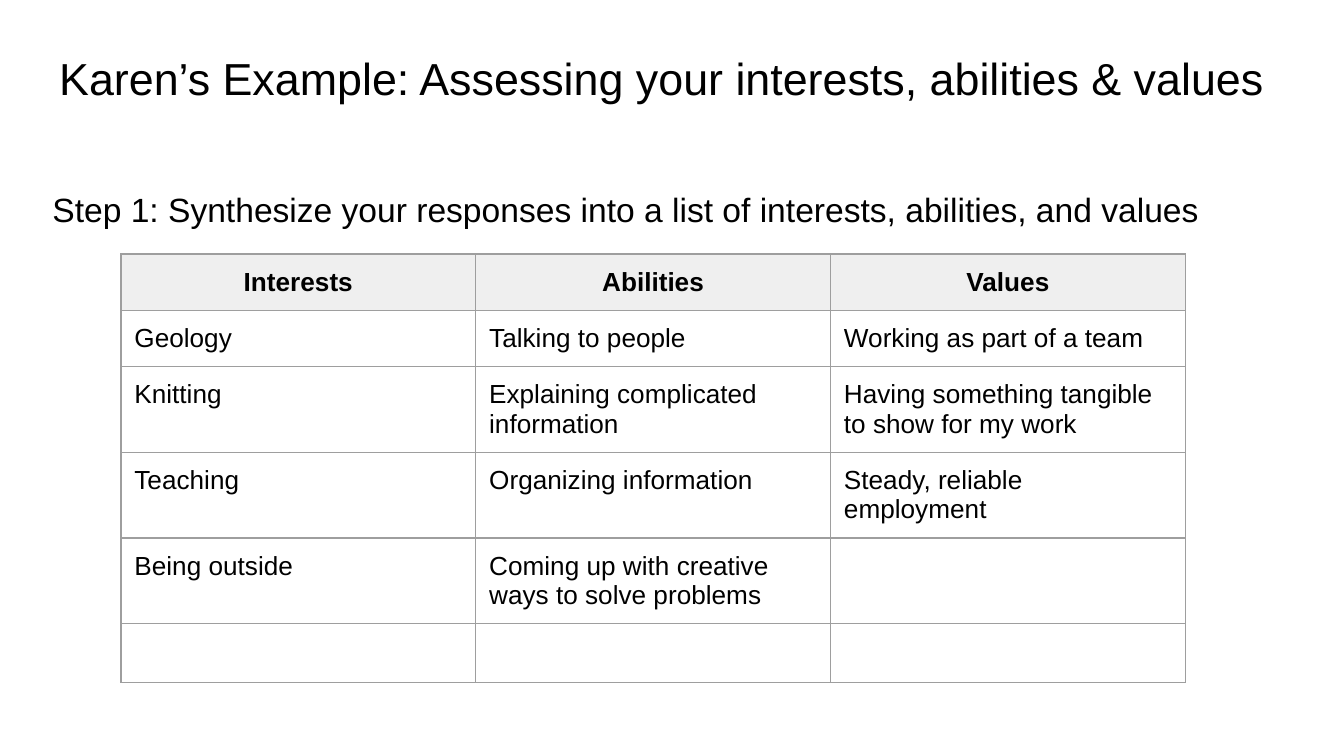
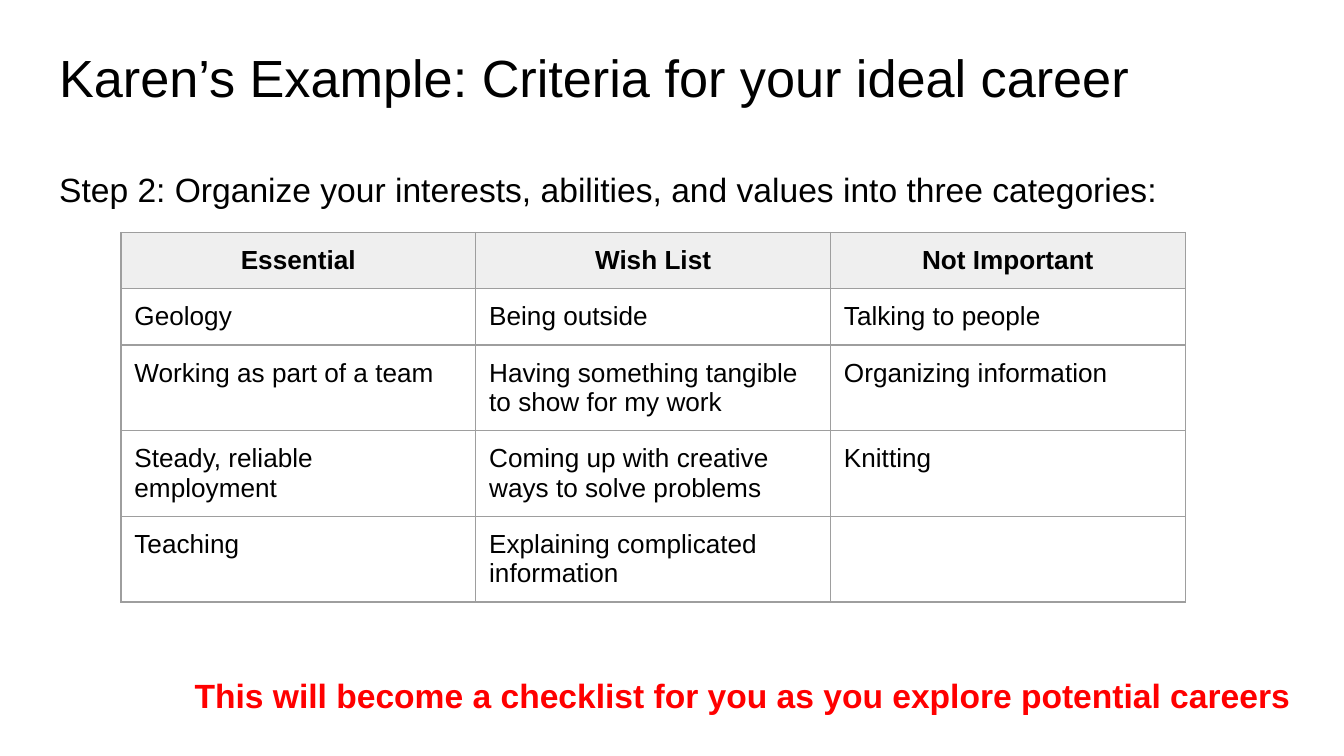
from lxml.etree import SubElement
from pptx import Presentation
from pptx.dml.color import RGBColor
from pptx.enum.text import MSO_ANCHOR, MSO_AUTO_SIZE, PP_ALIGN
from pptx.oxml.ns import qn
from pptx.util import Inches, Pt

COLORS = {
    "background": "FFFFFF",
    "text": "000000",
    "header": "EFEFEF",
    "border": "9E9E9E",
    "callout": "FF0000",
}
FONT = "Arial"

# Square grid cells: 100 columns across a slide of 56.25 rows
CELL = Inches(0.1)
SLIDE_COLUMNS, SLIDE_ROWS = 100, 56.25
TEXT_WIDTH = 93.2
TABLE_LEFT, TABLE_WIDTH, TABLE_ROW = 9, 79.2, 4.17

EXAMPLES = [
    {
        "title": "Karen’s Example: Assessing your interests, abilities & values",
        "title_box": (3.4, 2.8, TEXT_WIDTH, 6.3),
        "title_size": 24,
        "step": "Step 1: Synthesize your responses into a list of interests, abilities, and values",
        "step_box": (2.9, 12.6, TEXT_WIDTH, 37.4),
        "table_top": 18.9,
        "rows": [
            ("Interests", "Abilities", "Values"),
            ("Geology", "Talking to people", "Working as part of a team"),
            ("Knitting", "Explaining complicated information",
             "Having something tangible to show for my work"),
            ("Teaching", "Organizing information", "Steady, reliable employment"),
            ("Being outside", "Coming up with creative ways to solve problems", ""),
            ("", "", ""),
        ],
    },
    {
        "title": "Karen’s Example: Criteria for your ideal career",
        "title_box": (3.4, 2.4, TEXT_WIDTH, 6.3),
        "title_size": 28,
        "step": "Step 2: Organize your interests, abilities, and values into three categories:",
        "step_box": (3.4, 11.1, TEXT_WIDTH, 38.8),
        "table_top": 17.3,
        "rows": [
            ("Essential", "Wish List", "Not Important"),
            ("Geology", "Being outside", "Talking to people"),
            ("Working as part of a team", "Having something tangible to show for my work",
             "Organizing information"),
            ("Steady, reliable employment", "Coming up with creative ways to solve problems",
             "Knitting"),
            ("Teaching", "Explaining complicated information", ""),
        ],
        "callout": "This will become a checklist for you as you explore potential careers",
        "callout_box": (13.5, 49.2, 84.1, 5.1),
    },
]


def grid(*cells):
    """Turn grid units into slide lengths."""
    return [int(cell * CELL) for cell in cells]


def rgb(name):
    return RGBColor.from_string(COLORS[name])


def set_margins(target):
    target.margin_left = target.margin_right = CELL
    target.margin_top = target.margin_bottom = CELL


def format_paragraph(paragraph, size, color="text", bold=False, align=PP_ALIGN.LEFT):
    paragraph.alignment = align
    for run in paragraph.runs:
        run.font.name = FONT
        run.font.size = Pt(size)
        run.font.bold = bold
        run.font.color.rgb = rgb(color)


def fill_text(shape, box, text, size, **style):
    """Place a text shape and return its formatted paragraph."""
    shape.left, shape.top, shape.width, shape.height = grid(*box)
    text_frame = shape.text_frame
    text_frame.text = text
    text_frame.word_wrap = True
    text_frame.auto_size = MSO_AUTO_SIZE.NONE
    text_frame.vertical_anchor = MSO_ANCHOR.TOP
    set_margins(text_frame)
    paragraph = text_frame.paragraphs[0]
    format_paragraph(paragraph, size, **style)
    return paragraph


def add_step(shape, box, text):
    """Write the step as a body line without bullet or indent."""
    paragraph = fill_text(shape, box, text, 18)
    paragraph.line_spacing = 1.15
    paragraph.space_before = Pt(0)
    properties = paragraph._p.get_or_add_pPr()
    properties.set("marL", "0")
    properties.set("indent", "0")
    SubElement(properties, qn("a:buNone"))


def add_borders(cell):
    properties = cell._tc.get_or_add_tcPr()
    for side in ("lnL", "lnR", "lnT", "lnB"):
        line = SubElement(properties, qn(f"a:{side}"), w=str(Pt(0.75)))
        fill = SubElement(line, qn("a:solidFill"))
        SubElement(fill, qn("a:srgbClr"), val=COLORS["border"])


def format_cell(cell, text, is_header, size=14):
    cell.text_frame.text = text
    set_margins(cell)
    add_borders(cell)
    paragraph = cell.text_frame.paragraphs[0]
    if is_header:
        cell.fill.solid()
        cell.fill.fore_color.rgb = rgb("header")
        format_paragraph(paragraph, size, bold=True, align=PP_ALIGN.CENTER)
    else:
        cell.fill.background()
        format_paragraph(paragraph, size)
    if not text:
        # Empty cells keep the row height of the table's text size
        SubElement(paragraph._p, qn("a:endParaRPr"), sz=str(size * 100))


def add_criteria_table(slide, top, rows):
    box = grid(TABLE_LEFT, top, TABLE_WIDTH, TABLE_ROW * len(rows))
    table = slide.shapes.add_table(len(rows), len(rows[0]), *box).table
    table.horz_banding = False
    for row_index, row in enumerate(rows):
        for column_index, text in enumerate(row):
            format_cell(table.cell(row_index, column_index), text, row_index == 0)


def add_example_slide(presentation, example):
    slide = presentation.slides.add_slide(presentation.slide_layouts[1])
    slide.background.fill.solid()
    slide.background.fill.fore_color.rgb = rgb("background")
    # Title and step
    fill_text(slide.shapes.title, example["title_box"], example["title"], example["title_size"])
    add_step(slide.placeholders[1], example["step_box"], example["step"])
    # Three-column table
    add_criteria_table(slide, example["table_top"], example["rows"])
    # Closing remark
    if "callout" in example:
        callout = slide.shapes.add_textbox(*grid(*example["callout_box"]))
        fill_text(callout, example["callout_box"], example["callout"], 18,
                  color="callout", bold=True)


def main():
    presentation = Presentation()
    presentation.slide_width, presentation.slide_height = grid(SLIDE_COLUMNS, SLIDE_ROWS)
    for example in EXAMPLES:
        add_example_slide(presentation, example)
    presentation.save("out.pptx")


if __name__ == "__main__":
    main()
